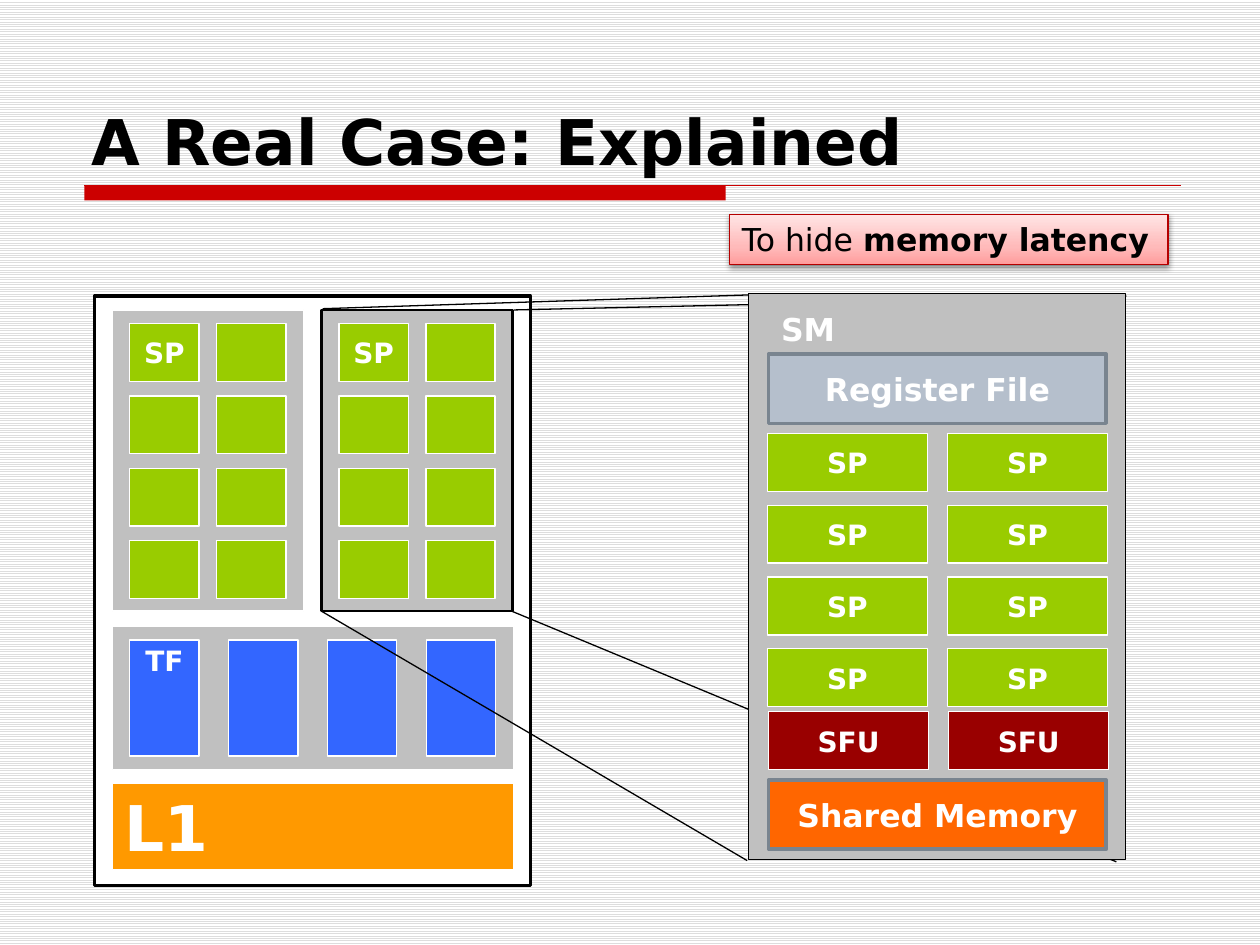
from copy import deepcopy

from lxml import etree
from pptx import Presentation
from pptx import oxml
from pptx import util as u
from pptx.dml import color
from pptx.enum import dml, shapes, text

FONT = "DejaVu Sans"
GREEN, GREY, BLACK, WHITE = "99CC00", "C0C0C0", "000000", "FFFFFF"
DRAW = "http://schemas.openxmlformats.org/drawingml/2006/main"
rgb = color.RGBColor.from_string

deck = Presentation()
deck.slide_width, deck.slide_height = u.Inches(10), u.Inches(7.5)
slide = deck.slides.add_slide(deck.slide_layouts[6])

back = slide.background.fill
back.patterned()
back.pattern = dml.MSO_PATTERN.LIGHT_HORIZONTAL
back.fore_color.rgb = rgb("DDDDDD")
back.back_color.rgb = rgb(WHITE)


def add_box(x, y, w, h, fill=None, edge=WHITE, thick=0.75, label="", size=16,
            ink=WHITE, align="CENTER", anchor="MIDDLE"):
    """Add a rectangle in inches; None for fill or edge leaves it out."""
    box = slide.shapes.add_shape(shapes.MSO_SHAPE.RECTANGLE, *map(u.Inches, (x, y, w, h)))
    box.shadow.inherit = False
    if fill:
        box.fill.solid()
        box.fill.fore_color.rgb = rgb(fill)
    else:
        box.fill.background()
    if edge:
        box.line.color.rgb = rgb(edge)
        box.line.width = u.Pt(thick)
    else:
        box.line.fill.background()
    if label:
        frame = box.text_frame
        frame.word_wrap = False
        frame.vertical_anchor = text.MSO_ANCHOR[anchor]
        para = frame.paragraphs[0]
        para.text = label
        para.alignment = text.PP_ALIGN[align]
        para.font.name, para.font.size, para.font.bold = FONT, u.Pt(size), True
        para.font.color.rgb = rgb(ink)
    return box


def add_line(x1, y1, x2, y2, ink=BLACK):
    line = slide.shapes.add_connector(
        shapes.MSO_CONNECTOR.STRAIGHT, *map(u.Inches, (x1, y1, x2, y2)))
    line.line.color.rgb = rgb(ink)
    line.line.width = u.Pt(0.75)
    etree.SubElement(line._element.spPr, f"{{{DRAW}}}effectLst")


# Title and rule
add_box(0.67, 1.47, 5.09, 0.12, "CC0000", None)
add_line(0.67, 1.47, 9.37, 1.47, "CC0000")
add_box(0.63, 0.13, 9.25, 1.33, None, None, label="A Real Case: Explained",
        size=36, ink=BLACK, align="LEFT", anchor="BOTTOM")

# Cluster with two multiprocessors
add_box(0.75, 2.35, 3.46, 4.68, WHITE, BLACK, 2)
for left, edge, thick in ((0.89, WHITE, 0.75), (2.55, BLACK, 1.5)):
    add_box(left, 2.46, 1.52, 2.39, GREY, edge, thick)
    for row in range(4):
        for col in range(2):
            add_box(left + 0.14 + 0.69 * col, 2.57 + 0.573 * row, 0.55, 0.46, GREEN,
                    label="SP" if row == col == 0 else "")

# Cache and texture units
add_box(0.89, 6.22, 3.19, 0.68, "FF9900", label="L1", size=36, align="LEFT")
add_box(0.89, 4.97, 3.19, 1.14, GREY)
for col in range(4):
    unit = add_box(1.03 + 0.785 * col, 5.08, 0.55, 0.92, "3366FF",
                   label="" if col else "TF", anchor="TOP")
    frame = unit.text_frame
    frame.margin_left = frame.margin_right = frame.margin_bottom = 0
    frame.margin_top = u.Inches(0.03)

# Zoom lines
for ends in ((2.56, 2.45, 5.97, 2.34), (2.55, 4.85, 5.93, 6.83),
             (4.08, 2.46, 8.94, 2.35), (4.06, 4.85, 8.86, 6.84)):
    add_line(*ends)

# Enlarged multiprocessor
add_box(5.94, 2.33, 2.99, 4.49, GREY, BLACK)
for col in range(2):
    left = 6.09 + 1.43 * col
    for row in range(4):
        add_box(left, 3.44 + 0.57 * row, 1.27, 0.46, GREEN, label="SP")
    add_box(left + 0.01, 5.65, 1.27, 0.46, "990000", label="SFU")
add_box(6.1, 2.41, 0.62, 0.4, None, None, label="SM", size=18, align="LEFT")
for top, fill, label in ((6.19, "FF6600", "Shared Memory"),
                         (2.81, "B5BFCC", "Register File")):
    add_box(6.1, top, 2.68, 0.55, fill, "79848F", 2, label, 18)

# Callout
note = add_box(5.79, 1.7, 3.48, 0.4, WHITE, "B50000", label="To hide ", size=18,
               ink=BLACK, align="LEFT")
para = note.text_frame.paragraphs[0]
para.font.bold = False
strong = para.add_run()
strong.text = "memory latency"
strong.font.bold = True

note.fill.gradient()
note.fill.gradient_angle = 90
first = note.fill.gradient_stops[0]._gs
first.addnext(deepcopy(first))
stops = ((0, "FF9D9D"), (0.35, "FFBABA"), (1, "FFE5E5"))
for stop, (place, tint) in zip(note.fill.gradient_stops, stops):
    stop.position = place
    stop.color.rgb = rgb(tint)

effects = note._element.spPr.find(f"{{{DRAW}}}effectLst")
effects.append(oxml.parse_xml(
    f'<a:outerShdw xmlns:a="{DRAW}" blurRad="{u.Pt(3.1)}" dist="{u.Pt(1.6)}" '
    'dir="5400000" rotWithShape="0"><a:srgbClr val="000000">'
    '<a:alpha val="38000"/></a:srgbClr></a:outerShdw>'))

deck.save("out.pptx")
